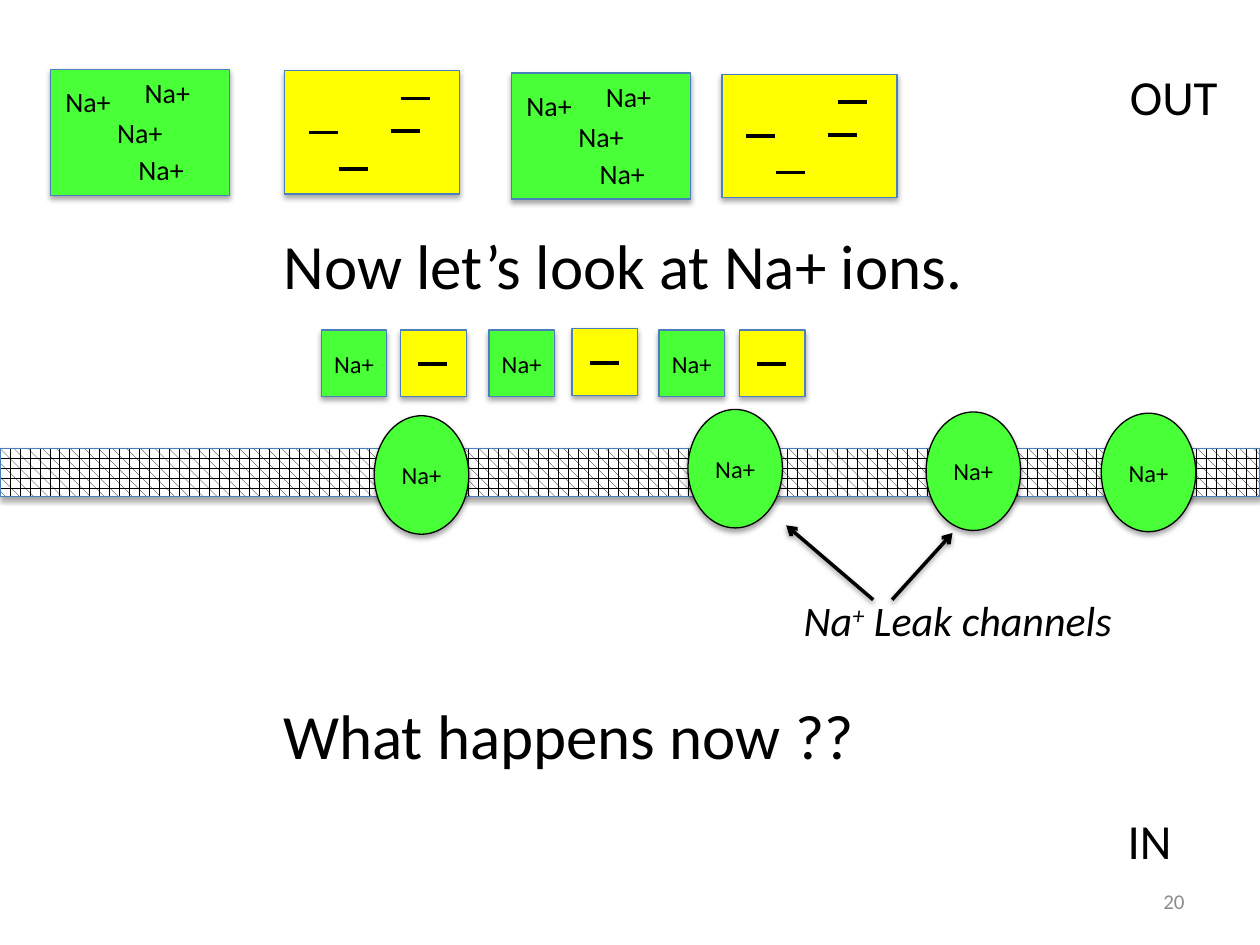
from lxml.etree import SubElement
from pptx import Presentation
from pptx.dml.color import RGBColor
from pptx.enum.dml import MSO_PATTERN
from pptx.enum.shapes import MSO_CONNECTOR, MSO_SHAPE
from pptx.enum.text import MSO_ANCHOR, MSO_AUTO_SIZE, PP_ALIGN
from pptx.oxml.ns import qn
from pptx.util import Inches, Pt

COLORS = {"sodium": "48FF38", "anion": "FFFF00", "edge": "4B7EBC",
          "ink": "000000", "paper": "FFFFFF", "number": "8C8C8C"}
FONT = "Calibri"
ION = "Na+"
DASH = 0.23

HEADING = ("Now let’s look at Na+ ions.", (2.15, 1.75, 5.87, 0.71))
LABELS = [  # text, place, size
    ("IN", (8.85, 6.38, 0.55, 0.57), 28),
    ("OUT", (8.87, 0.48, 0.9, 0.57), 28),
    ("What happens now ??", (2.15, 5.48, 4.78, 0.71), 36),
]
MEMBRANE = (0, 3.56, 10, 0.38)
CHANNELS = [(2.97, 3.3), (5.46, 3.25), (7.35, 3.27), (8.74, 3.28)]
CHANNEL_SIZE = (0.75, 0.94)

SODIUM_TILES = [(2.55, 2.62), (3.88, 2.62), (5.23, 2.62)]
ANION_TILES = [(3.18, 2.62), (4.54, 2.61), (5.87, 2.62)]
TILE_SIZE = (0.52, 0.53)
TILE_DASH = [(0.14, 0.27)]

SODIUM_POOLS = [(0.4, 0.55), (4.06, 0.58)]
SODIUM_POOL_SIZE = (1.42, 1)
POOL_IONS = [(0.65, 0), (0.6, 0.61), (0.02, 0.07)]  # offsets in a pool
ION_SIZE = (0.78, 0.37)
ANION_POOLS = [(2.26, 0.56), (5.73, 0.59)]
ANION_POOL_SIZE = (1.39, 0.98)
POOL_DASHES = [(0.92, 0.22), (0.84, 0.48), (0.19, 0.49), (0.43, 0.78)]

LEAK_LABEL = [("Na", 0), ("+", 30000), (" Leak channels", 0)]  # text, baseline
LEAK_PLACE = (6.28, 4.67, 2.84, 0.51)
ARROWS = [((6.93, 4.76), (6.24, 4.17)), ((7.08, 4.76), (7.56, 4.23))]


def rgb(name):
    return RGBColor.from_string(COLORS[name])


def inches(values):
    return [Inches(value) for value in values]


def shifted(origin, offset):
    return origin[0] + offset[0], origin[1] + offset[1]


def add_shadow(effects, distance, opacity):
    """Append a soft shadow that falls straight down."""
    shadow = SubElement(effects, qn("a:outerShdw"), blurRad=str(Pt(3.1)),
                        dist=str(Pt(distance)), dir="5400000", rotWithShape="0")
    color = SubElement(shadow, qn("a:srgbClr"), val=COLORS["ink"])
    SubElement(color, qn("a:alpha"), val=str(opacity * 1000))


def add_span(para, text, size, color="ink", italic=False):
    span = para.add_run()
    span.text = text
    span.font.color.rgb = rgb(color)
    formats = {"name": FONT, "size": Pt(size), "italic": italic}
    for key, value in formats.items():
        setattr(span.font, key, value)
    return span


def set_frame(shape, align=PP_ALIGN.LEFT, anchor=MSO_ANCHOR.TOP, wrap=False):
    frame = shape.text_frame
    formats = {"auto_size": MSO_AUTO_SIZE.NONE, "word_wrap": wrap,
               "vertical_anchor": anchor}
    for key, value in formats.items():
        setattr(frame, key, value)
    frame.paragraphs[0].alignment = align
    return frame.paragraphs[0]


def add_label(page, text, place, size):
    add_span(set_frame(page.shapes.add_textbox(*inches(place))), text, size)


def add_box(page, kind, place, fill=None, edge="edge", text="", size=14):
    box = page.shapes.add_shape(kind, *inches(place))
    if fill:
        box.fill.solid()
        box.fill.fore_color.rgb = rgb(fill)
    box.line.color.rgb = rgb(edge)
    box.line.width = Pt(0.75)
    box.shadow.inherit = False
    add_shadow(box._element.spPr.find(qn("a:effectLst")), 1.8, 35)
    if text:
        para = set_frame(box, PP_ALIGN.CENTER, MSO_ANCHOR.MIDDLE)
        add_span(para, text, size)
    return box


def add_line(page, start, end, arrow=False):
    line = page.shapes.add_connector(MSO_CONNECTOR.STRAIGHT, *inches(start + end))
    line.line.color.rgb = rgb("ink")
    line.line.width = Pt(2)
    properties = line._element.spPr
    effects = SubElement(properties, qn("a:effectLst"))
    if arrow:
        SubElement(properties.find(qn("a:ln")), qn("a:tailEnd"), type="arrow")
        add_shadow(effects, 1.6, 38)


def add_anions(page, origin, size, dashes):
    add_box(page, MSO_SHAPE.RECTANGLE, origin + size, "anion")
    for offset in dashes:
        start = shifted(origin, offset)
        add_line(page, start, shifted(start, (DASH, 0)))


def add_heading(page):
    text, place = HEADING
    title = page.shapes.title
    title.left, title.top, title.width, title.height = inches(place)
    add_span(set_frame(title), text, 36)


def add_membrane(page):
    membrane = add_box(page, MSO_SHAPE.RECTANGLE, MEMBRANE)
    membrane.fill.patterned()
    membrane.fill.pattern = MSO_PATTERN.PLAID
    membrane.fill.fore_color.rgb = rgb("ink")
    membrane.fill.back_color.rgb = rgb("paper")
    for origin in CHANNELS:
        add_box(page, MSO_SHAPE.OVAL, origin + CHANNEL_SIZE, "sodium", "ink", ION)


def add_ions(page):
    for origin in SODIUM_TILES:
        add_box(page, MSO_SHAPE.RECTANGLE, origin + TILE_SIZE, "sodium", text=ION)
    for origin in ANION_TILES:
        add_anions(page, origin, TILE_SIZE, TILE_DASH)
    for origin in SODIUM_POOLS:
        add_box(page, MSO_SHAPE.RECTANGLE, origin + SODIUM_POOL_SIZE, "sodium",
                text=ION, size=16)
        for offset in POOL_IONS:
            add_label(page, ION, shifted(origin, offset) + ION_SIZE, 16)
    for origin in ANION_POOLS:
        add_anions(page, origin, ANION_POOL_SIZE, POOL_DASHES)


def add_leak_note(page):
    para = set_frame(page.shapes.add_textbox(*inches(LEAK_PLACE)), wrap=True)
    for text, baseline in LEAK_LABEL:
        span = add_span(para, text, 24, italic=True)
        if baseline:
            span._r.get_or_add_rPr().set("baseline", str(baseline))
    for start, end in ARROWS:
        add_line(page, start, end, arrow=True)


def add_page_number(page):
    box = page.shapes.add_textbox(*inches((7.17, 6.95, 2.33, 0.4)))
    para = set_frame(box, PP_ALIGN.RIGHT, MSO_ANCHOR.MIDDLE, wrap=True)
    add_span(para, "20", 12, "number")


def main():
    deck = Presentation()
    deck.slide_width, deck.slide_height = inches((10, 7.5))
    page = deck.slides.add_slide(deck.slide_layouts[5])
    add_heading(page)
    add_membrane(page)
    for label in LABELS:
        add_label(page, *label)
    add_ions(page)
    add_leak_note(page)
    add_page_number(page)
    deck.save("out.pptx")


if __name__ == "__main__":
    main()
